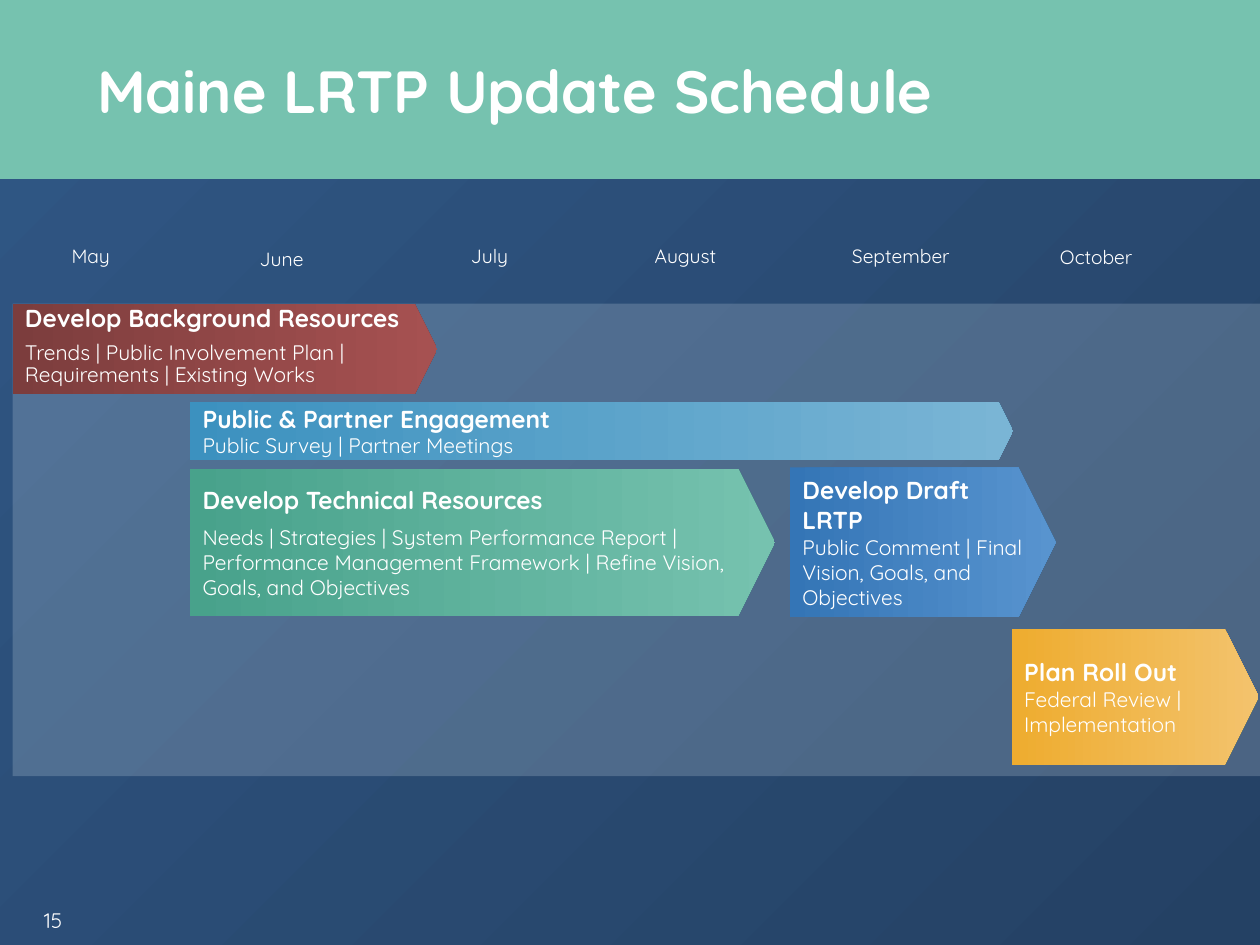
from lxml import etree
from pptx import Presentation
from pptx.dml.color import RGBColor
from pptx.enum.shapes import MSO_SHAPE
from pptx.enum.text import MSO_ANCHOR, MSO_AUTO_SIZE, PP_ALIGN
from pptx.oxml.ns import qn
from pptx.util import Inches, Pt

RECTANGLE, PENTAGON = MSO_SHAPE.RECTANGLE, MSO_SHAPE.PENTAGON
MIDDLE, TOP = MSO_ANCHOR.MIDDLE, MSO_ANCHOR.TOP
LEFT, CENTER = PP_ALIGN.LEFT, PP_ALIGN.CENTER
FIT_SHAPE, NO_FIT = MSO_AUTO_SIZE.SHAPE_TO_FIT_TEXT, MSO_AUTO_SIZE.NONE
TITLE_ONLY = 5

MONTHS = [  # name, left, top, width
    ("May", 0.14, 1.89, 1.16),
    ("June", 1.73, 1.91, 1.01),
    ("July", 3.23, 1.89, 1.31),
    ("August", 4.83, 1.89, 1.22),
    ("September", 6.47, 1.89, 1.36),
    ("October", 8.02, 1.9, 1.36),
]

TIGHT = {"line_spacing": Pt(12.4), "space_after": Pt(6)}
SPACED = {"space_before": Pt(6)}
PHASES = [  # heading, detail, box, gradient, heading format, detail format
    ("Public & Partner Engagement", "Public Survey | Partner Meetings",
     (1.51, 3.19, 6.53, 0.46), ("3C91BF", "7AB5D5"), {}, {}),
    ("Develop Background Resources",
     "Trends | Public Involvement Plan | Requirements | Existing Works",
     (0.1, 2.41, 3.37, 0.72), ("7C3D3D", "A65151"), TIGHT, TIGHT),
    ("Develop Technical Resources",
     "Needs | Strategies | System Performance Report | Performance "
     "Management Framework | Refine Vision, Goals, and Objectives",
     (1.51, 3.72, 4.64, 1.17), ("48A28B", "76C2AF"), {}, SPACED),
    ("Develop Draft LRTP", "Public Comment | Final Vision, Goals, and Objectives",
     (6.27, 3.71, 2.11, 1.19), ("3475B6", "5894CF"), {}, {}),
    ("Plan Roll Out", "Federal Review | Implementation",
     (8.03, 4.99, 1.96, 1.08), ("EEAC2F", "F3C36D"), {}, {}),
]


def color(hex_string):
    return RGBColor.from_string(hex_string)


def set_values(target, values):
    for name, value in values.items():
        setattr(target, name, value)


class ScheduleSlide:
    font_name = "Quicksand"
    text_color = "FFFFFF"

    def __init__(self, slide):
        self.slide = slide

    def gradient(self, fill, colors, clockwise_angle=0):
        fill.gradient()
        fill.gradient_angle = 360 - clockwise_angle
        for stop, hex_string in zip(fill.gradient_stops, colors):
            stop.color.rgb = color(hex_string)

    def add_text(self, paragraph, text, size, bold=False, **values):
        set_values(paragraph, {"alignment": LEFT, **values})
        run = paragraph.add_run()
        run.text = text
        set_values(run.font, {"name": self.font_name, "size": Pt(size), "bold": bold})
        run.font.color.rgb = color(self.text_color)

    def shape(self, kind, box):
        shape = self.slide.shapes.add_shape(kind, *map(Inches, box))
        shape.shadow.inherit = False
        shape.line.fill.background()
        return shape

    def rectangle(self, box, fill, opacity=100):
        shape = self.shape(RECTANGLE, box)
        shape.fill.solid()
        shape.fill.fore_color.rgb = color(fill)
        if opacity < 100:
            fill_color = shape._element.spPr.find(".//" + qn("a:srgbClr"))
            etree.SubElement(fill_color, qn("a:alpha"), val=str(opacity * 1000))

    def title(self, text, box):
        title = self.slide.shapes.title
        names = ("left", "top", "width", "height")
        set_values(title, dict(zip(names, map(Inches, box))))
        set_values(title.text_frame, {"vertical_anchor": MIDDLE, "word_wrap": True,
                                      "auto_size": NO_FIT})
        self.add_text(title.text_frame.paragraphs[0], text, 34, bold=True)
        # Bring the title in front of the band
        self.slide.shapes._spTree.append(title._element)

    def label(self, text, box, size, alignment=LEFT, anchor=TOP, fit=NO_FIT):
        frame = self.slide.shapes.add_textbox(*map(Inches, box)).text_frame
        set_values(frame, {"word_wrap": True, "auto_size": fit,
                           "vertical_anchor": anchor})
        self.add_text(frame.paragraphs[0], text, size, alignment=alignment)

    def phase(self, heading, detail, box, colors, heading_format, detail_format):
        shape = self.shape(PENTAGON, box)
        shape.adjustments[0] = 0.25
        self.gradient(shape.fill, colors)
        frame = shape.text_frame
        margins = ("margin_left", "margin_top", "margin_right", "margin_bottom")
        set_values(frame, {"word_wrap": True, "vertical_anchor": MIDDLE,
                           **dict.fromkeys(margins, Inches(0.1))})
        self.add_text(frame.paragraphs[0], heading, 14, bold=True, **heading_format)
        self.add_text(frame.add_paragraph(), detail, 12, **detail_format)


def main():
    presentation = Presentation()
    presentation.slide_width, presentation.slide_height = Inches(10), Inches(7.5)
    layout = presentation.slide_layouts[TITLE_ONLY]
    schedule = ScheduleSlide(presentation.slides.add_slide(layout))

    # Background, title band and timeline panel
    schedule.gradient(schedule.slide.background.fill, ("305785", "244164"), 45)
    schedule.rectangle((0, 0, 10, 1.42), "76C2AF")
    schedule.rectangle((0.1, 2.41, 9.9, 3.75), "E4F0F7", opacity=20)
    schedule.title("Maine LRTP Update Schedule", (0.67, 0, 8.92, 1.42))

    # Month headings
    for month, left, top, width in MONTHS:
        schedule.label(month, (left, top, width, 0.29), 11, CENTER, fit=FIT_SHAPE)

    # Project phases
    for phase in PHASES:
        schedule.phase(*phase)

    # Page number
    schedule.label("15", (0.25, 7.1, 0.73, 0.4), 12, anchor=MIDDLE)

    presentation.save("out.pptx")


if __name__ == "__main__":
    main()
